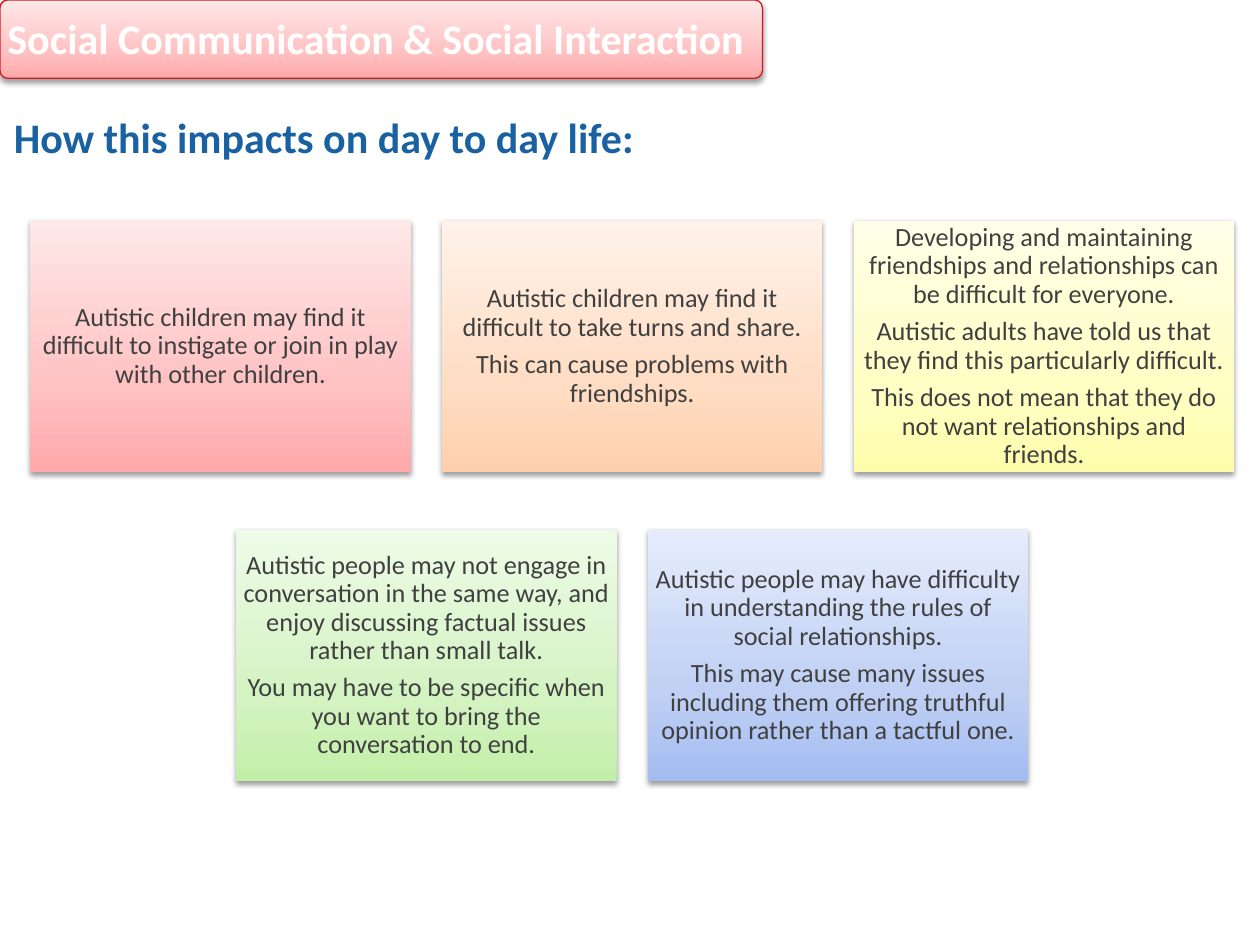
"""Build the slide on social communication and social interaction."""
from copy import deepcopy

from lxml.etree import SubElement
from pptx import Presentation
from pptx.dml.color import RGBColor
from pptx.enum.shapes import MSO_SHAPE as Shape
from pptx.enum.text import MSO_ANCHOR as Anchor, PP_ALIGN as Align
from pptx.oxml.ns import qn
from pptx.util import Cm, Pt

COLOURS = {"heading": "1A61A2", "body": "404040", "white": "FFFFFF",
           "outline": "D31A24", "shadow": "000000"}
GRADIENTS = {
    "red": ("FFA9AA", "FFC2C3", "FFE8E8"),
    "orange": ("FFD0AC", "FFDDC4", "FFF2E9"),
    "yellow": ("FFFDAB", "FFFEC4", "FFFFE9"),
    "green": ("C2EFA8", "D4F3C3", "EEFBE7"),
    "blue": ("A3BCF1", "BFD0F4", "E6ECFC"),
}
STOPS = (0, 0.35, 1)


def add_panel(page, kind, left, top, width, height, gradient):
    panel = page.shapes.add_shape(kind, Cm(left), Cm(top), Cm(width), Cm(height))
    panel.fill.gradient()
    panel.fill.gradient_angle = 90
    properties = panel._element.spPr
    stop_list = properties.find(".//" + qn("a:gsLst"))
    stop_list.append(deepcopy(stop_list[-1]))
    for stop, position, colour in zip(panel.fill.gradient_stops, STOPS, GRADIENTS[gradient]):
        stop.position = position
        stop.color.rgb = RGBColor.from_string(colour)
    panel.line.fill.background()
    panel.shadow.inherit = False
    shadow = SubElement(properties.find(qn("a:effectLst")), qn("a:outerShdw"),
                        blurRad="40000", dist="20000", dir="5400000", rotWithShape="0")
    tint = SubElement(shadow, qn("a:srgbClr"), val=COLOURS["shadow"])
    SubElement(tint, qn("a:alpha"), val="38000")
    return panel


def add_span(para, text, size, colour, bold=False):
    span = para.add_run()
    span.text = text
    span.font.name = "Calibri"
    span.font.size = Pt(size)
    span.font.bold = bold
    span.font.color.rgb = RGBColor.from_string(COLOURS[colour])


deck = Presentation()
deck.slide_width, deck.slide_height = Cm(25.4), Cm(19.05)
page = deck.slides.add_slide(deck.slide_layouts[6])

banner = add_panel(page, Shape.ROUNDED_RECTANGLE, 0, 0, 15.37, 1.58, "red")
banner.adjustments[0] = 0.1
banner.line.color.rgb = RGBColor.from_string(COLOURS["outline"])
banner.line.width = Pt(0.75)

titles = [
    ("Social Communication & Social Interaction", -0.1, 0.13, 15.37, 2.21, "white"),
    ("How this impacts on day to day life:", 0.03, 2.13, 13.67, 1.28, "heading"),
]
for text, left, top, width, height, colour in titles:
    box = page.shapes.add_textbox(Cm(left), Cm(top), Cm(width), Cm(height))
    box.text_frame.word_wrap = True
    add_span(box.text_frame.paragraphs[0], text, 24, colour, bold=True)

card_width, card_height = 7.67, 5.07
column_step, row_step = 8.3, 6.23
rows = [
    (0.61, [
        ("red", ["Autistic children may find it difficult to instigate or join in play "
                 "with other children."]),
        ("orange", ["Autistic children may find it difficult to take turns and share.",
                    "This can cause problems with friendships."]),
        ("yellow", ["Developing and maintaining friendships and relationships can be "
                    "difficult for everyone.",
                    "Autistic adults have told us that they find this particularly difficult.",
                    "This does not mean that they do not want relationships and friends."]),
    ]),
    (0.61 + column_step / 2, [
        ("green", ["Autistic people may not engage in conversation in the same way, and "
                   "enjoy discussing factual issues rather than small talk.",
                   "You may have to be specific when you want to bring the conversation "
                   "to end."]),
        ("blue", ["Autistic people may have difficulty in understanding the rules of "
                  "social relationships.",
                  "This may cause many issues including them offering truthful opinion "
                  "rather than a tactful one."]),
    ]),
]
for row, (row_left, cards) in enumerate(rows):
    for column, (gradient, texts) in enumerate(cards):
        card = add_panel(page, Shape.RECTANGLE, row_left + column * column_step,
                         4.45 + row * row_step, card_width, card_height, gradient)
        frame = card.text_frame
        frame.word_wrap = True
        frame.vertical_anchor = Anchor.MIDDLE
        frame.margin_left = frame.margin_right = Cm(0.15)
        frame.margin_top = frame.margin_bottom = Cm(0.15)
        for index, text in enumerate(texts):
            para = frame.add_paragraph() if index else frame.paragraphs[0]
            para.alignment = Align.CENTER
            para.line_spacing = 0.9
            para.space_after = Pt(5.25)
            add_span(para, text, 15, "body")

deck.save("out.pptx")
